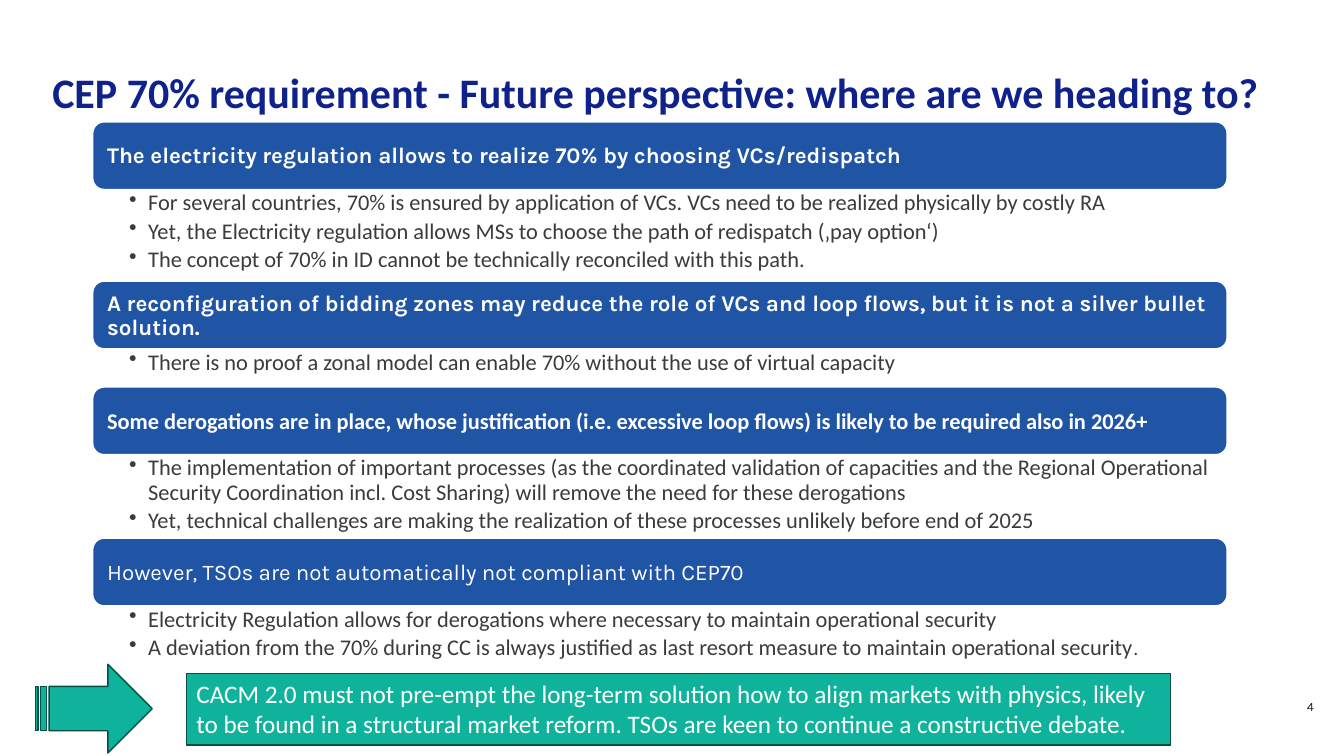
from dataclasses import dataclass

from lxml.etree import SubElement
from pptx import Presentation
from pptx.dml.color import RGBColor
from pptx.enum.shapes import MSO_SHAPE as Shape
from pptx.enum.text import MSO_ANCHOR as Anchor, PP_ALIGN as Align
from pptx.oxml.ns import qn
from pptx.util import Inches, Pt

COLORS = {
    "title": "0F218B", "bar": "2054A5", "white": "FFFFFF", "body": "3A3A3F",
    "accent": "0FB29A", "accent_line": "074E43", "number": "1D1D20",
}
LEFT, WIDTH, FIRST_TOP, BAR_HEIGHT = 0.92, 11.25, 1.21, 0.67
INDENT = 0.19


@dataclass
class Section:
    heading: str
    bullets: list[str]
    body_height: float
    font: str = "Karla"
    bold: bool = True
    small_ending: str = ""


SECTIONS = [
    Section(
        "The electricity regulation allows to realize 70% by choosing VCs/redispatch",
        ["For several countries, 70% is ensured by application of VCs. "
         "VCs need to be realized physically by costly RA",
         "Yet, the Electricity regulation allows MSs to choose the path of redispatch (‚pay option‘)",
         "The concept of 70% in ID cannot be technically reconciled with this path."],
        0.91),
    Section(
        "A reconfiguration of bidding zones may reduce the role of VCs and loop flows, "
        "but it is not a silver bullet solution.",
        ["There is no proof a zonal model can enable 70% without the use of virtual capacity"],
        0.38),
    Section(
        "Some derogations are in place, whose justification (i.e. excessive loop flows) "
        "is likely to be required also in 2026+",
        ["The implementation of important processes (as the coordinated validation of capacities "
         "and the Regional Operational Security Coordination incl. Cost Sharing) "
         "will remove the need for these derogations",
         "Yet, technical challenges are making the realization of these processes "
         "unlikely before end of 2025"],
        0.83, font="Calibri"),
    Section(
        "However, TSOs are not automatically not compliant with CEP70",
        ["Electricity Regulation allows for derogations where necessary to maintain operational security",
         "A deviation from the 70% during CC is always justified as last resort measure "
         "to maintain operational security"],
        0.6, bold=False, small_ending="."),
]


def rgb(name: str) -> RGBColor:
    return RGBColor.from_string(COLORS[name])


def set_font(paragraph, name: str, size: float, color: str, bold: bool = False) -> None:
    font = paragraph.font
    font.name, font.size, font.bold = name, Pt(size), bold
    font.color.rgb = rgb(color)


def set_frame(frame, anchor: Anchor, insets: tuple = (0.1, 0.05, 0.1, 0.05)) -> None:
    frame.word_wrap = True
    frame.vertical_anchor = anchor
    (frame.margin_left, frame.margin_top,
     frame.margin_right, frame.margin_bottom) = map(Inches, insets)


def add_box(slide, kind: Shape, at: tuple, fill: str, line: str):
    box = slide.shapes.add_shape(kind, *map(Inches, at))
    box.shadow.inherit = False
    box.fill.solid()
    box.fill.fore_color.rgb = rgb(fill)
    box.line.color.rgb = rgb(line)
    box.line.width = Pt(1)
    return box


def add_label(slide, at: tuple, text: str, font: str, size: float, color: str,
              spacing: float, bold: bool = False, align: Align = Align.LEFT) -> None:
    frame = slide.shapes.add_textbox(*map(Inches, at)).text_frame
    set_frame(frame, Anchor.MIDDLE)
    paragraph = frame.paragraphs[0]
    paragraph.text, paragraph.alignment = text, align
    paragraph.line_spacing = Pt(spacing)
    set_font(paragraph, font, size, color, bold)


def add_section(slide, section: Section, top: float) -> None:
    # Heading bar
    bar = add_box(slide, Shape.ROUNDED_RECTANGLE, (LEFT, top, WIDTH, BAR_HEIGHT), "bar", "white")
    set_frame(bar.text_frame, Anchor.MIDDLE, (0.11, 0.08, 0.09, 0.06))
    heading = bar.text_frame.paragraphs[0]
    heading.text, heading.alignment = section.heading, Align.LEFT
    heading.line_spacing = 0.9
    set_font(heading, section.font, 16, "white", section.bold)

    # Bullets below the bar
    body = slide.shapes.add_textbox(
        *map(Inches, (LEFT, top + BAR_HEIGHT, WIDTH, section.body_height))).text_frame
    set_frame(body, Anchor.TOP, (0.36, 0.02, 0.12, 0.02))
    for index, text in enumerate(section.bullets):
        bullet = body.add_paragraph() if index else body.paragraphs[0]
        bullet.text, bullet.level = text, 1
        bullet.line_spacing, bullet.space_after = 0.9, Pt(3)
        properties = bullet._p.get_or_add_pPr()
        properties.set("marL", str(Inches(INDENT)))
        properties.set("indent", str(Inches(-INDENT)))
        SubElement(properties, qn("a:buChar")).set("char", "•")
        set_font(bullet, "Calibri", 16, "body")
    if section.small_ending:
        ending = bullet.add_run()
        ending.text, ending.font.size = section.small_ending, Pt(14)


def main() -> None:
    deck = Presentation()
    deck.slide_width, deck.slide_height = Inches(13.33), Inches(7.5)
    slide = deck.slides.add_slide(deck.slide_layouts[6])

    # Page number and title
    add_label(slide, (6.75, 6.82, 6.38, 0.4), "4", "Karla", 9, "number", 9, align=Align.RIGHT)
    add_label(slide, (0.42, 0.32, 12.71, 1.23),
              "CEP 70% requirement - Future perspective: where are we heading to?",
              "Calibri", 30, "title", 32, bold=True)

    # Conclusion
    conclusion = add_box(slide, Shape.RECTANGLE, (1.85, 6.68, 9.76, 0.71), "accent", "accent_line")
    set_frame(conclusion.text_frame, Anchor.TOP)
    message = conclusion.text_frame.paragraphs[0]
    message.text = ("CACM 2.0 must not pre-empt the long-term solution how to align markets with "
                    "physics, likely to be found in a structural market reform. "
                    "TSOs are keen to continue a constructive debate.")
    message.alignment = Align.LEFT
    set_font(message, "Calibri", 18, "white")

    # Stacked sections
    top = FIRST_TOP
    for section in SECTIONS:
        add_section(slide, section, top)
        top += BAR_HEIGHT + section.body_height

    # Arrow to the conclusion
    add_box(slide, Shape.STRIPED_RIGHT_ARROW, (0.35, 6.59, 1.16, 0.88), "accent", "accent_line")

    deck.save("out.pptx")


if __name__ == "__main__":
    main()
